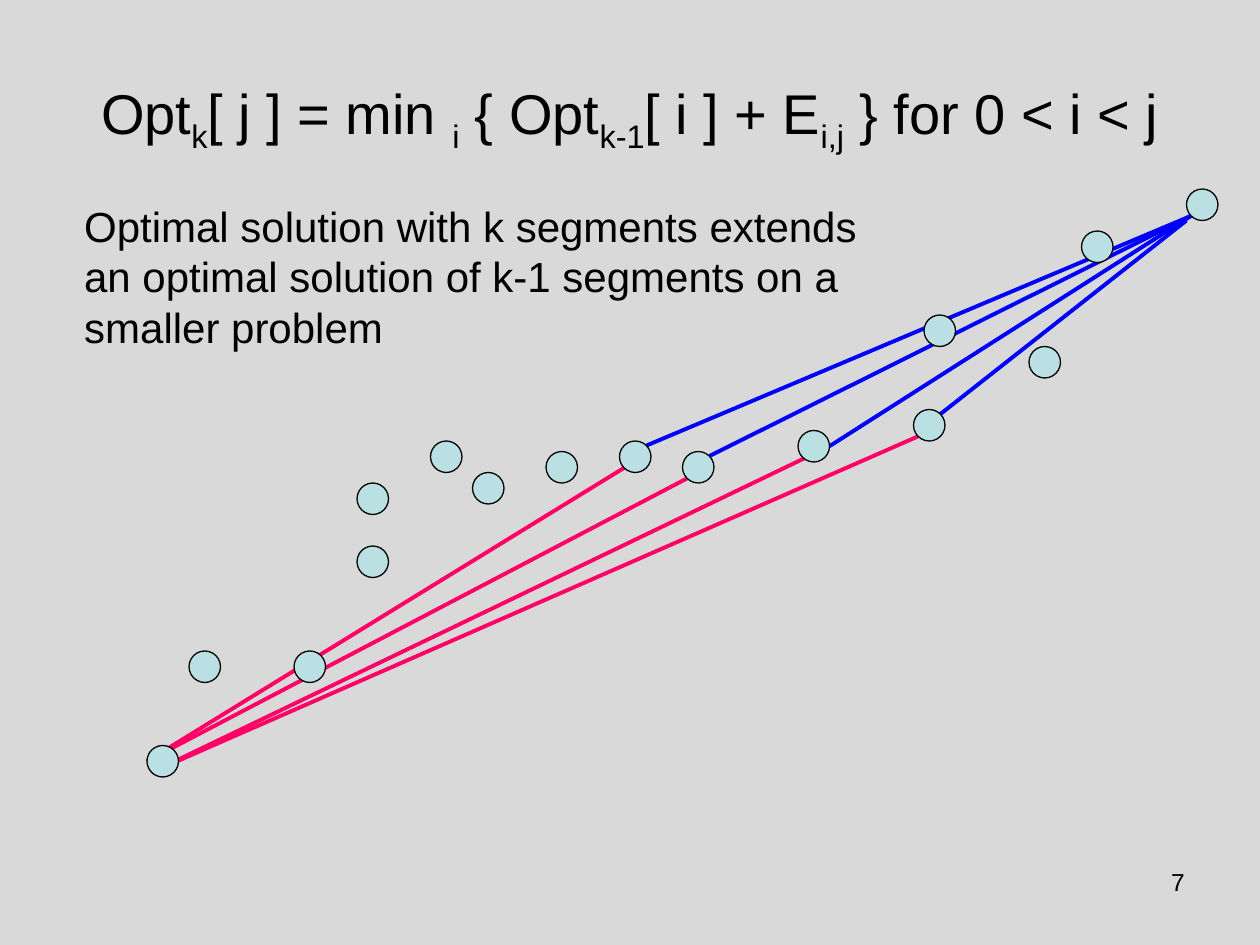
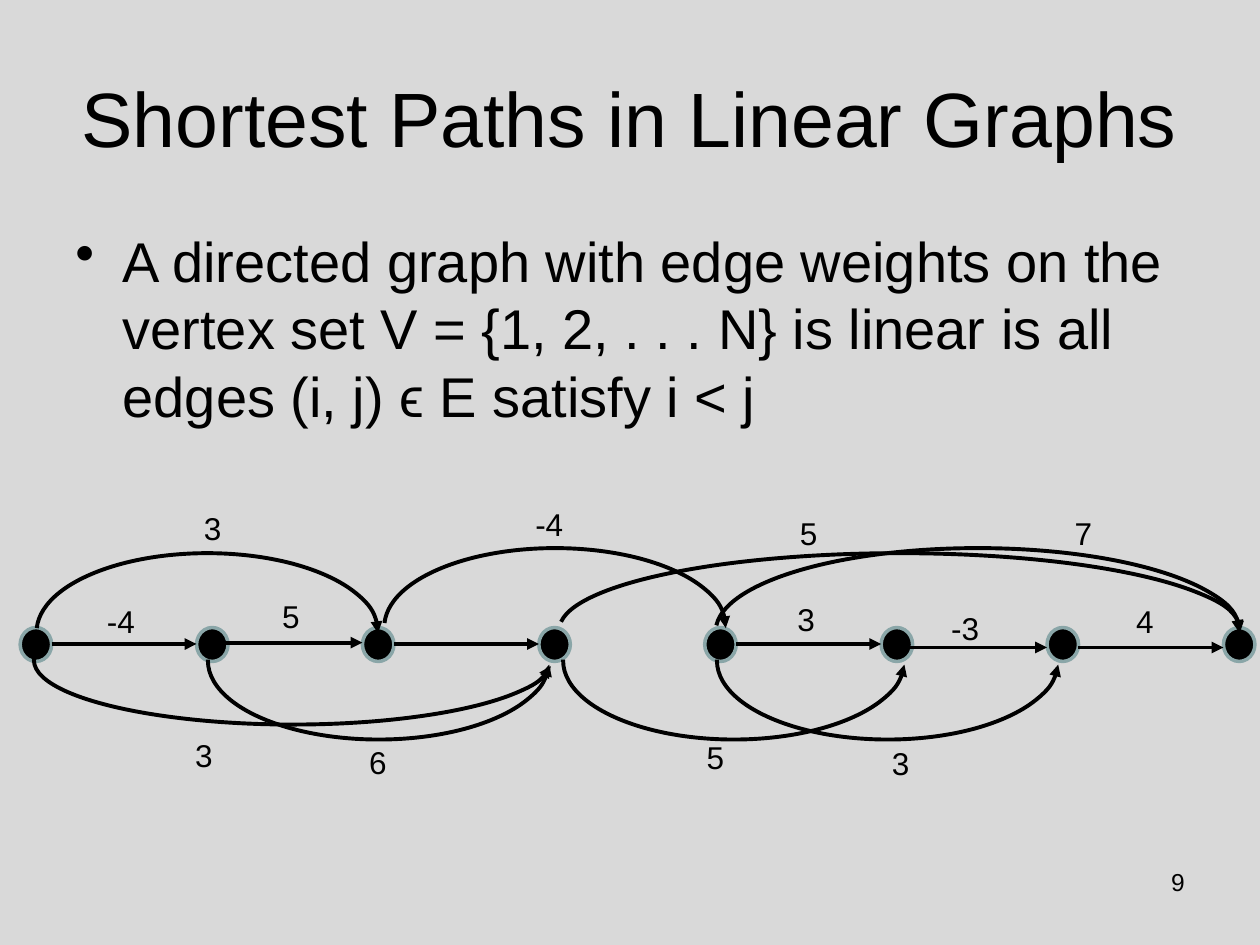
from dataclasses import dataclass

from lxml import etree
from pptx import Presentation
from pptx import util as u
from pptx.dml.color import RGBColor
from pptx.enum import shapes, text
from pptx.oxml.ns import qn


@dataclass(frozen=True)
class Theme:
    font: str = "Arial"
    back: str = "D9D9D9"
    ink: str = "000000"
    dot: str = "BBE0E3"
    rim: str = "8AA6A8"
    last_segment: str = "0000FF"
    prefix: str = "FF0066"
    title: int = 44
    body: int = 32
    note: int = 24
    label: int = 18
    number: int = 14
    stroke: float = 2.25


T = Theme()
LEFT, CENTER, RIGHT = text.PP_ALIGN.LEFT, text.PP_ALIGN.CENTER, text.PP_ALIGN.RIGHT
DOT = 18

START, END = (84, 426), (678, 108)
BREAKS = [(354, 252), (390, 258), (456, 246), (522, 234)]
OTHER_POINTS = [(108, 372), (204, 276), (246, 252), (168, 372), (270, 270),
                (312, 258), (204, 312), (528, 180), (588, 198), (618, 132)]
UPPER_RIGHT, LOWER_LEFT = (0.71, -0.71), (-0.71, 0.71)
MID_LEFT, MID_RIGHT, CORNER = (-1, 0), (1, 0), (-1, 1)

VERTEX_TOP, VERTEX_H = 358.6, 19.4
VERTEX_X = [11.5 + 195.6 * (i // 2) + 100.8 * (i % 2) for i in range(8)]
STEPS = [(0, 18, 368), (1, 11.5, 367.2), (2, 18, 368),
         (4, 18, 368), (5, 11.5, 370), (6, 18, 370)]
UPPER_ARCS = [(20.9, 316.1, 195.1, 90), (219.6, 313.2, 195.1, 90),
              (409, 313.2, 299.5, 95), (319.7, 316.1, 388.8, 87.1)]
LOWER_ARCS = [(118.8, 332.6, 195.1, 90), (321.8, 332.6, 195.1, 90),
              (409.7, 332.6, 195.1, 90), (19.4, 340.6, 295.9, 73.4)]
WEIGHTS = [("3", 109.4, 287.3), ("-4", 298.8, 285.1), ("-4", 54, 340.6),
           ("5", 154.1, 337.7), ("5", 450, 290.2), ("6", 203.8, 421.2),
           ("5", 396.7, 418.3), ("3", 448.6, 339.1), ("-3", 536.4, 344.2),
           ("4", 642.2, 340.6), ("7", 607, 290.2), ("3", 502.6, 421.9),
           ("3", 104.4, 416.9)]


def color(value):
    """Turn a hex string into a colour."""
    return RGBColor.from_string(value)


def pts(*values):
    """Turn numbers into point lengths."""
    return [u.Pt(v) for v in values]


def write(s, box, content, size, align=LEFT, middle=False, wrap=True, bullet=False):
    """Add a text box; parts between bars are subscripts."""
    tf = s.shapes.add_textbox(*pts(*box)).text_frame
    tf.word_wrap = wrap
    if middle:
        tf.vertical_anchor = text.MSO_ANCHOR.MIDDLE
    p = tf.paragraphs[0]
    p.alignment = align
    for i, part in enumerate(content.split("|")):
        r = p.add_run()
        r.text = part
        r.font.name, r.font.size = T.font, u.Pt(size)
        r.font.color.rgb = color(T.ink)
        if i % 2:
            r._r.get_or_add_rPr().set("baseline", "-25000")
    if bullet:
        p.space_before = u.Pt(size * 0.2)
        pPr = p._p.get_or_add_pPr()
        pPr.set("marL", str(u.Pt(27)))
        pPr.set("indent", str(-u.Pt(27)))
        etree.SubElement(pPr, qn("a:buChar"), char="•")


def stroke(sp, ink, width=T.stroke, arrow=None):
    """Style a line, with an optional arrow at its head or tail."""
    sp.line.color.rgb = color(ink)
    sp.line.width = u.Pt(width)
    if arrow:
        ln = sp._element.spPr.get_or_add_ln()
        etree.SubElement(ln, qn(f"a:{arrow}End"), type="triangle")


def line(s, start, end, ink, arrow=None):
    """Add a straight line between two points."""
    c = s.shapes.add_connector(shapes.MSO_CONNECTOR.STRAIGHT, *pts(*start, *end))
    stroke(c, ink, arrow=arrow)
    etree.SubElement(c._element.spPr, qn("a:effectLst"))


def circle(s, box, fill, ink, width):
    """Add a filled ellipse."""
    sp = s.shapes.add_shape(shapes.MSO_SHAPE.OVAL, *pts(*box))
    sp.shadow.inherit = False
    sp.fill.solid()
    sp.fill.fore_color.rgb = color(fill)
    stroke(sp, ink, width)


def arc(s, box, below=False):
    """Add a half-ellipse edge that points to the right."""
    sp = s.shapes.add_shape(shapes.MSO_SHAPE.ARC, *pts(*box))
    sp.shadow.inherit = False
    sp.adjustments[0], sp.adjustments[1] = 108.771, 0.251
    sp.fill.background()
    sp.rotation = 180 if below else 0
    stroke(sp, T.ink, arrow="head" if below else "tail")


def site(dot, direction):
    """Give the point on a dot that lies in a direction from its centre."""
    return [c + DOT / 2 * (1 + d) for c, d in zip(dot, direction)]


def new_slide(prs, title, title_size, number):
    """Add a slide with background, title and slide number."""
    s = prs.slides.add_slide(prs.slide_layouts[6])
    s.background.fill.solid()
    s.background.fill.fore_color.rgb = color(T.back)
    write(s, (36, 21.6, 648, 90), title, title_size, align=CENTER, middle=True)
    write(s, (516, 491.8, 168, 37.4), number, T.number, align=RIGHT)
    return s


def segments_slide(prs):
    """Show how k segments extend k-1 segments."""
    s = new_slide(prs, "Opt|k|[ j ] = min |i| { Opt|k-1|[ i ] + E|i,j| } for 0 < i < j",
                  T.body, "7")
    leave = [UPPER_RIGHT, UPPER_RIGHT, MID_RIGHT, UPPER_RIGHT]
    arrive = [LOWER_LEFT] * 3 + [CORNER]
    for dot, a, b in zip(BREAKS, leave, arrive):
        line(s, site(dot, a), site(END, b), T.last_segment)
    leave = [MID_LEFT] * 2 + [LOWER_LEFT] * 2
    arrive = [LOWER_LEFT, LOWER_LEFT, MID_RIGHT, LOWER_LEFT]
    for dot, a, b in zip(BREAKS, leave, arrive):
        line(s, site(START, a), site(dot, b), T.prefix)
    for dot in [START, *OTHER_POINTS, *BREAKS, END]:
        circle(s, (*dot, DOT, DOT), T.dot, T.ink, 0.75)
    write(s, (41, 110.9, 469.4, 93.6),
          "Optimal solution with k segments extends an optimal solution "
          "of k-1 segments on a smaller problem", T.note)


def graph_slide(prs):
    """Show a linear graph with weighted edges."""
    s = new_slide(prs, "Shortest Paths in Linear Graphs", T.title, "9")
    write(s, (36, 126, 648, 137.5),
          "A directed graph with edge weights on the vertex set "
          "V = {1, 2, . . . N} is linear is all edges (i, j) ϵ E satisfy i < j",
          T.body, bullet=True)
    for x in VERTEX_X:
        circle(s, (x, VERTEX_TOP, DOT, VERTEX_H), T.ink, T.rim, 2)
    for box in UPPER_ARCS:
        arc(s, box)
    for box in LOWER_ARCS:
        arc(s, box, below=True)
    for i, offset, y in STEPS:
        line(s, (VERTEX_X[i] + offset, y), (VERTEX_X[i + 1], y), T.ink, arrow="tail")
    for weight, x, y in WEIGHTS:
        width = 24.5 if len(weight) == 1 else 36.5
        write(s, (x, y, width, 28.8), weight, T.label, wrap=False)


def main():
    """Build and save the slides."""
    prs = Presentation()
    prs.slide_width, prs.slide_height = pts(720, 540)
    segments_slide(prs)
    graph_slide(prs)
    prs.save("out.pptx")


if __name__ == "__main__":
    main()
